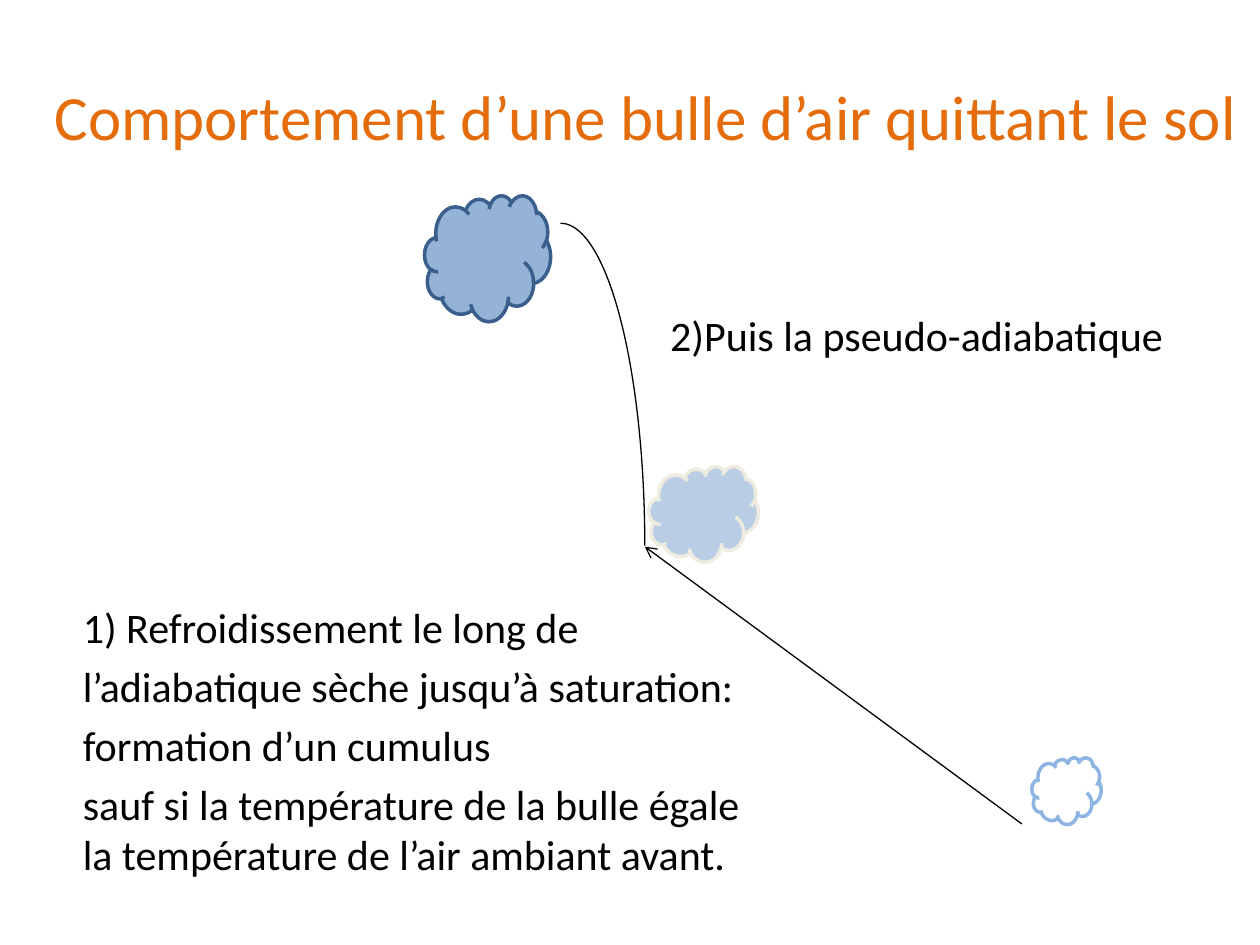
from dataclasses import dataclass

from lxml.etree import SubElement
from pptx import Presentation
from pptx.dml.color import RGBColor
from pptx.enum.shapes import MSO_CONNECTOR, MSO_SHAPE
from pptx.enum.text import MSO_ANCHOR, PP_ALIGN
from pptx.oxml.ns import qn
from pptx.slide import Slide
from pptx.text.text import TextFrame
from pptx.util import Cm, Pt

BLACK = RGBColor(0x00, 0x00, 0x00)
WHITE = RGBColor(0xFF, 0xFF, 0xFF)
ORANGE = RGBColor(0xE4, 0x6C, 0x0A)
CREAM = RGBColor(0xEE, 0xEC, 0xE1)
PALE_BLUE = RGBColor(0xB9, 0xCD, 0xE5)
SKY_BLUE = RGBColor(0x8E, 0xB4, 0xE3)
MID_BLUE = RGBColor(0x95, 0xB3, 0xD7)
DARK_BLUE = RGBColor(0x3A, 0x5F, 0x8C)


@dataclass(frozen=True)
class Box:
    """Position and size in centimetres."""
    left: float
    top: float
    width: float
    height: float

    def lengths(self) -> tuple[Cm, Cm, Cm, Cm]:
        return Cm(self.left), Cm(self.top), Cm(self.width), Cm(self.height)


@dataclass(frozen=True)
class Cloud:
    box: Box
    fill: RGBColor
    outline: RGBColor


@dataclass(frozen=True)
class Note:
    box: Box
    paragraphs: tuple[str, ...]
    space_before: float = 0


CLOUDS = (
    Cloud(Box(13.08, 9.4, 2.21, 1.93), PALE_BLUE, CREAM),
    Cloud(Box(20.8, 15.27, 1.4, 1.35), WHITE, SKY_BLUE),
    Cloud(Box(8.56, 3.94, 2.54, 2.54), MID_BLUE, DARK_BLUE),
)
NOTES = (
    Note(Box(1.42, 12.01, 14.27, 6.5), (
        "1) Refroidissement le long de",
        "l’adiabatique sèche jusqu’à saturation:",
        "formation d’un cumulus",
        "sauf si la température de la bulle égale "
        "la température de l’air ambiant avant.",
    ), space_before=4.8),
    Note(Box(13.26, 6.12, 10.8, 1.27), ("2)Puis la pseudo-adiabatique",)),
)
MOIST_ARC = Box(9.6, 4.5, 3.4, 13)
DRY_START = (20.6, 16.61)
DRY_END = (13, 11.02)


def write(frame: TextFrame, paragraphs: tuple[str, ...], size: float,
          color: RGBColor, **layout) -> None:
    """Fill the frame, giving each paragraph the layout attributes."""
    frame.word_wrap = True
    frame.text = "\n".join(paragraphs)
    for paragraph in frame.paragraphs:
        for attribute, value in layout.items():
            setattr(paragraph, attribute, value)
        font = paragraph.runs[0].font
        for attribute, value in {"name": "Calibri", "size": Pt(size)}.items():
            setattr(font, attribute, value)
        font.color.rgb = color


def add_title(slide: Slide, text: str, box: Box) -> None:
    title = slide.shapes.title
    title.left, title.top, title.width, title.height = box.lengths()
    title.text_frame.vertical_anchor = MSO_ANCHOR.MIDDLE
    write(title.text_frame, (text,), 36, ORANGE, alignment=PP_ALIGN.CENTER)


def add_note(slide: Slide, note: Note) -> None:
    frame = slide.shapes.add_textbox(*note.box.lengths()).text_frame
    write(frame, note.paragraphs, 24, BLACK,
          alignment=PP_ALIGN.LEFT, space_before=Pt(note.space_before))


def add_cloud(slide: Slide, cloud: Cloud) -> None:
    shape = slide.shapes.add_shape(MSO_SHAPE.CLOUD, *cloud.box.lengths())
    shape.shadow.inherit = False
    shape.fill.solid()
    shape.fill.fore_color.rgb = cloud.fill
    shape.line.color.rgb = cloud.outline
    shape.line.width = Pt(2)


def add_moist_path(slide: Slide) -> None:
    arc = slide.shapes.add_shape(MSO_SHAPE.ARC, *MOIST_ARC.lengths())
    arc.shadow.inherit = False
    arc.fill.background()
    arc.line.color.rgb = BLACK
    arc.line.width = Pt(0.75)


def add_dry_path(slide: Slide) -> None:
    arrow = slide.shapes.add_connector(
        MSO_CONNECTOR.STRAIGHT, *map(Cm, DRY_START + DRY_END))
    arrow.line.color.rgb = BLACK
    arrow.line.width = Pt(0.75)
    SubElement(arrow.line._get_or_add_ln(), qn("a:tailEnd"), type="arrow")
    SubElement(arrow._element.spPr, qn("a:effectLst"))


def main() -> None:
    presentation = Presentation()
    presentation.slide_width, presentation.slide_height = Cm(25.4), Cm(19.05)
    slide = presentation.slides.add_slide(presentation.slide_layouts[5])
    add_title(slide, "Comportement d’une bulle d’air quittant le sol",
              Box(0.71, 0.74, 24.61, 3.18))
    add_dry_path(slide)
    for cloud in CLOUDS:
        add_cloud(slide, cloud)
    add_moist_path(slide)
    for note in NOTES:
        add_note(slide, note)
    presentation.save("out.pptx")


if __name__ == "__main__":
    main()
